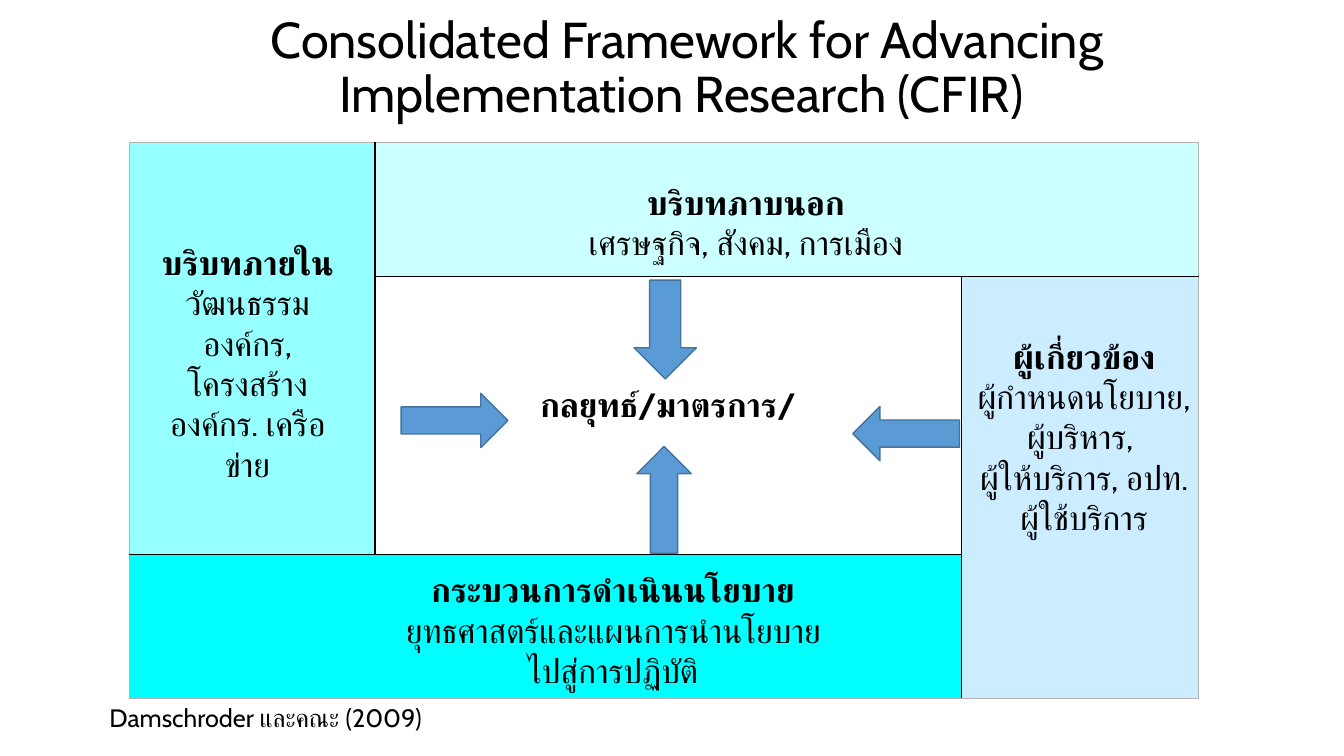
from lxml.etree import SubElement
from pptx import Presentation
from pptx.dml.color import RGBColor
from pptx.enum.shapes import MSO_SHAPE as SHAPE
from pptx.enum.text import MSO_ANCHOR as ANCHOR, PP_ALIGN as ALIGN
from pptx.oxml.ns import qn
from pptx.util import Cm, Pt

FONT = "Cabin"
BLACK = RGBColor(0x00, 0x00, 0x00)
GREY = RGBColor(0xB2, 0xB2, 0xB2)
CYAN = RGBColor(0x00, 0xFF, 0xFF)
PALE_CYAN = RGBColor(0xCC, 0xFF, 0xFF)
PALE_BLUE = RGBColor(0xCC, 0xEC, 0xFF)
ARROW_BLUE = RGBColor(0x5B, 0x9B, 0xD5)
ARROW_EDGE = RGBColor(0x43, 0x73, 0x9E)

COL_WIDTHS = (6.2, 14.78, 5.97)
ROW_HEIGHTS = (3.38, 7.01, 3.63)

# First row, first column, last row, last column, fill, opacity in percent
REGIONS = (
    (0, 0, 1, 0, CYAN, 41),
    (0, 1, 0, 2, PALE_CYAN, 100),
    (1, 1, 1, 1, None, 100),
    (1, 2, 2, 2, PALE_BLUE, 100),
    (2, 0, 2, 1, CYAN, 100),
)

# Position, heading, detail paragraphs
LABELS = (
    ((13.36, 9.55, 7.87, 1.27), "กลยุทธ์/มาตรการ/", ()),
    ((12.98, 4.45, 11.63, 2.31), "บริบทภาบนอก", ("เศรษฐกิจ, สังคม, การเมือง",)),
    ((3.51, 5.97, 5.46, 6.4), "บริบทภายใน",
     ("วัฒนธรรมองค์กร, โครงสร้างองค์กร. เครือข่าย",)),
    ((9.68, 14.22, 11.53, 3.33), "กระบวนการดำเนินนโยบาย",
     ("ยุทธศาสตร์และแผนการนำนโยบายไปสู่การปฏิบัติ",)),
    ((24.26, 8.33, 6.12, 7.44), "ผู้เกี่ยวข้อง",
     ("ผู้กำหนดนโยบาย, ผู้บริหาร, ", "ผู้ให้บริการ, อปท.", "ผู้ใช้บริการ")),
)

# Kind, position, rotation
ARROWS = (
    (SHAPE.DOWN_ARROW, (15.98, 7.06, 1.57, 2.49), 0),
    (SHAPE.RIGHT_ARROW, (10.11, 9.91, 2.69, 1.37), 0),
    (SHAPE.RIGHT_ARROW, (21.49, 10.24, 2.69, 1.37), 180),
    (SHAPE.RIGHT_ARROW, (15.39, 11.91, 2.69, 1.37), 270),
)


def box(at):
    return [Cm(v) for v in at]


def add_run(p, text, size, bold=False):
    r = p.add_run()
    r.text = text
    r.font.name = FONT
    r.font.size = Pt(size)
    r.font.bold = bold
    r.font.color.rgb = BLACK


def add_title(s, text, at):
    sp = s.shapes.title
    sp.left, sp.top, sp.width, sp.height = box(at)
    tf = sp.text_frame
    tf.word_wrap = True
    tf.vertical_anchor = ANCHOR.MIDDLE
    p = tf.paragraphs[0]
    p.alignment = ALIGN.CENTER
    p.line_spacing = 0.9
    add_run(p, text, 36)


def add_text(s, at, lines, size, align):
    """Each line is a (text, bold) pair."""
    tf = s.shapes.add_textbox(*box(at)).text_frame
    tf.word_wrap = True
    for i, (text, bold) in enumerate(lines):
        p = tf.add_paragraph() if i else tf.paragraphs[0]
        p.alignment = align
        add_run(p, text, size, bold)


def set_border(cell, side, color, width):
    ln = SubElement(cell._tc.get_or_add_tcPr(), qn("a:ln" + side), w=str(Pt(width)))
    fill = SubElement(ln, qn("a:solidFill"))
    SubElement(fill, qn("a:srgbClr"), val=str(color))


def format_cell(cell, outer_edges, color, opacity):
    for side, outer in zip("LRTB", outer_edges):
        set_border(cell, side, *((GREY, 0.5) if outer else (BLACK, 1)))
    if color is None:
        cell.fill.background()
        return
    cell.fill.solid()
    cell.fill.fore_color.rgb = color
    if opacity < 100:
        clr = cell._tc.tcPr.find(qn("a:solidFill")).find(qn("a:srgbClr"))
        SubElement(clr, qn("a:alpha"), val=str(opacity * 1000))


def add_framework(s, left, top):
    rows, cols = len(ROW_HEIGHTS), len(COL_WIDTHS)
    at = (left, top, sum(COL_WIDTHS), sum(ROW_HEIGHTS))
    table = s.shapes.add_table(rows, cols, *box(at)).table
    table.first_row = table.horz_banding = False
    for col, width in zip(table.columns, COL_WIDTHS):
        col.width = Cm(width)
    for row, height in zip(table.rows, ROW_HEIGHTS):
        row.height = Cm(height)
    for r1, c1, r2, c2, color, opacity in REGIONS:
        outer_edges = (c1 == 0, c2 == cols - 1, r1 == 0, r2 == rows - 1)
        for r in range(r1, r2 + 1):
            for c in range(c1, c2 + 1):
                format_cell(table.cell(r, c), outer_edges, color, opacity)
        if (r1, c1) != (r2, c2):
            table.cell(r1, c1).merge(table.cell(r2, c2))


def add_arrow(s, kind, at, rotation):
    sp = s.shapes.add_shape(kind, *box(at))
    sp.rotation = rotation
    sp.shadow.inherit = False
    sp.fill.solid()
    sp.fill.fore_color.rgb = ARROW_BLUE
    sp.line.color.rgb = ARROW_EDGE
    sp.line.width = Pt(1)


def main():
    prs = Presentation()
    prs.slide_width, prs.slide_height = Cm(33.87), Cm(19.05)
    s = prs.slides.add_slide(prs.slide_layouts[5])

    # Title and coloured framework
    add_title(s, "Consolidated Framework for Advancing Implementation Research (CFIR) ",
              (2.34, 0.43, 29.95, 2.64))
    add_framework(s, 3.25, 3.58)

    # Domain labels: bold heading, plain details
    for at, heading, details in LABELS:
        lines = [(heading, True)] + [(text, False) for text in details]
        add_text(s, at, lines, 24, ALIGN.CENTER if details else ALIGN.LEFT)

    # Arrows pointing at the centre
    for kind, at, rotation in ARROWS:
        add_arrow(s, kind, at, rotation)

    # Citation
    add_text(s, (2.51, 17.58, 11.4, 1.02), [("Damschroder และคณะ (2009)", False)],
             18, ALIGN.LEFT)

    prs.save("out.pptx")


if __name__ == "__main__":
    main()
